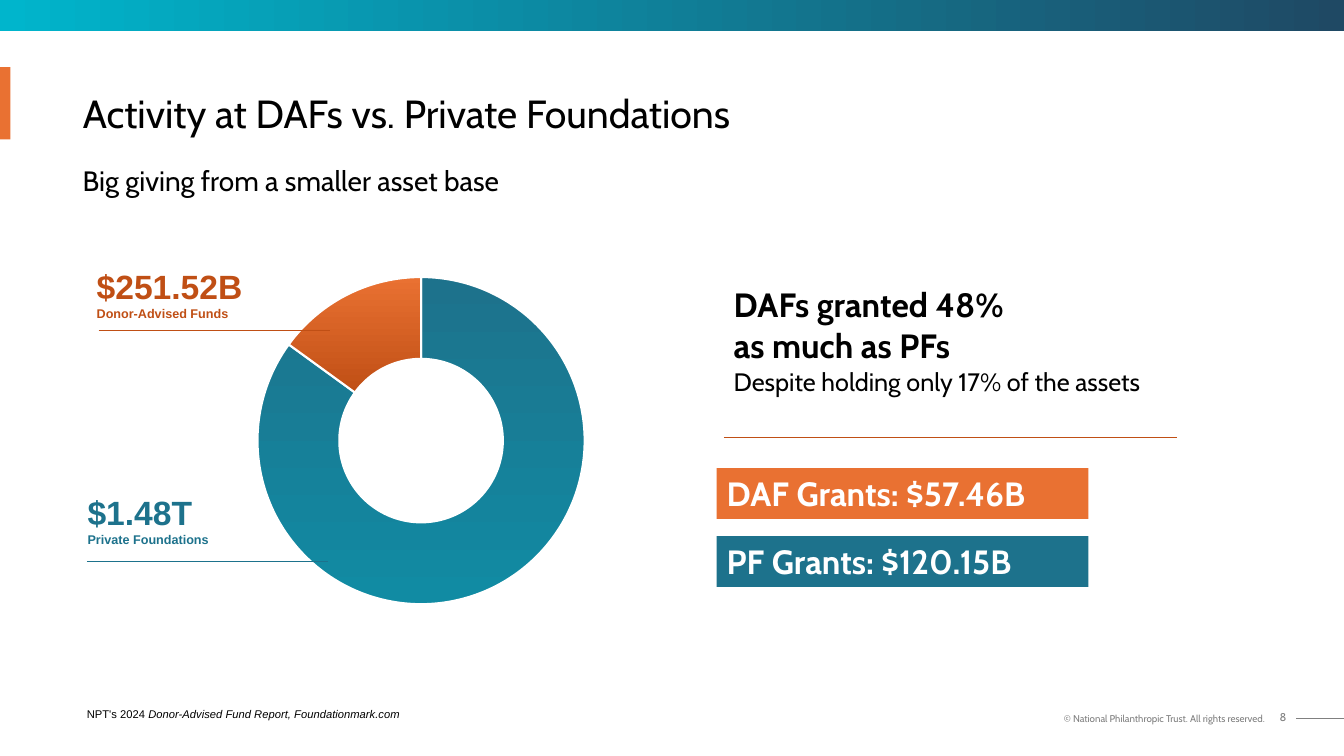
import pptx
import pptx.util
import pptx.chart.data
import pptx.dml.color
import pptx.enum.chart
import pptx.enum.shapes
import pptx.enum.text
import pptx.oxml
import pptx.oxml.ns
from lxml import etree

Pt = pptx.util.Pt
ALIGN = pptx.enum.text.PP_ALIGN
ANCHOR = pptx.enum.text.MSO_ANCHOR

COLORS = {
    "black": "000000", "white": "FFFFFF", "grey": "808080",
    "orange": "E97132", "rust": "C04F15",
    "teal": "1D728C", "light_teal": "118BA3",
    "cyan": "00B5CC", "navy": "1F4964",
}
W, H = 960, 540


def rgb(name):
    return pptx.dml.color.RGBColor.from_string(COLORS[name])


def set_gradient(fill, start, end, angle):
    """Two-colour gradient; angle runs counter-clockwise."""
    fill.gradient()
    fill.gradient_angle = angle
    for stop, name in zip(fill.gradient_stops, (start, end)):
        stop.color.rgb = rgb(name)


def fill_text(tf, paragraphs, font, color, align=ALIGN.LEFT, spacing=None,
              margins=(7.2, 3.6)):
    """Each paragraph is a list of (text, size, bold, italic) runs."""
    tf.word_wrap = True
    tf.auto_size = pptx.enum.text.MSO_AUTO_SIZE.NONE
    tf.margin_left = tf.margin_right = Pt(margins[0])
    tf.margin_top = tf.margin_bottom = Pt(margins[1])
    for i, runs in enumerate(paragraphs):
        p = tf.add_paragraph() if i else tf.paragraphs[0]
        p.alignment = align
        p.space_before = Pt(0)
        if spacing:
            p.line_spacing = spacing
        for text, size, bold, italic in runs:
            r = p.add_run()
            r.text = text
            r.font.name = font
            r.font.size = Pt(size)
            r.font.bold = bold
            r.font.italic = italic
            r.font.color.rgb = rgb(color)


def add_text(slide, box, paragraphs, font, color, **options):
    sp = slide.shapes.add_textbox(*map(Pt, box))
    fill_text(sp.text_frame, paragraphs, font, color, **options)
    return sp


def add_rule(slide, left, right, y, color):
    line = slide.shapes.add_connector(
        pptx.enum.shapes.MSO_CONNECTOR.STRAIGHT, Pt(left), Pt(y), Pt(right), Pt(y))
    line.line.color.rgb = rgb(color)
    line.line.width = Pt(0.75)
    etree.SubElement(line._element.spPr, pptx.oxml.ns.qn("a:effectLst"))


def add_bar(slide, box):
    sp = slide.shapes.add_shape(
        pptx.enum.shapes.MSO_SHAPE.RECTANGLE, *map(Pt, box))
    sp.shadow.inherit = False
    sp.line.fill.background()
    return sp


def add_frame(slide):
    """Top band, accent tab and footer."""
    set_gradient(add_bar(slide, (0, 0, W, 22.5)).fill, "cyan", "navy", 0)
    tab = add_bar(slide, (0, 48, 7.5, 51.5))
    tab.fill.solid()
    tab.fill.fore_color.rgb = rgb("orange")
    add_rule(slide, 926, W, 513, "grey")
    add_text(slide, (877, 504, 49, 29), [[("8", 8, False, False)]],
             "Cabin", "grey", align=ALIGN.RIGHT)
    add_text(slide, (730, 505.5, 180.5, 29),
             [[("© National Philanthropic Trust. All rights reserved.", 7, False, False)]],
             "Cabin", "grey", align=ALIGN.RIGHT)
    add_text(slide, (57, 502.5, 261, 15),
             [[("NPT's 2024 ", 8, False, False),
               ("Donor-Advised Fund Report, Foundationmark.com", 8, False, True)]],
             "Arial", "black", margins=(5, 2.9))


def add_heading(slide, left, top, width):
    title = slide.shapes.title
    title.left, title.top, title.width, title.height = map(Pt, (left, top, width, 47))
    fill_text(title.text_frame,
              [[("Activity at DAFs vs. Private Foundations", 28, False, False)]],
              "Cabin", "black", spacing=0.9)
    title.text_frame.vertical_anchor = ANCHOR.MIDDLE
    add_text(slide, (left, top + 57, width, 30),
             [[("Big giving from a smaller asset base", 20, False, False)]],
             "Cabin", "black", spacing=0.9)


def add_asset_chart(slide, left, top, width, height):
    data = pptx.chart.data.CategoryChartData()
    data.categories = ["1", "2"]
    data.add_series("Series 1", (85, 15))
    chart = slide.shapes.add_chart(
        pptx.enum.chart.XL_CHART_TYPE.DOUGHNUT,
        Pt(left), Pt(top), Pt(width), Pt(height), data).chart
    chart.has_legend = False
    chart.has_title = False
    chart.font.name = "Arial"
    chart.font.size = Pt(10)
    chart.font.color.rgb = rgb("black")

    plot = chart.plots[0]
    plot.vary_by_categories = True
    slices = (("teal", "light_teal"), ("orange", "rust"))
    for i, (start, end) in enumerate(slices):
        fmt = plot.series[0].points[i].format
        set_gradient(fmt.fill, start, end, 270)
        fmt.line.color.rgb = rgb("white")
        fmt.line.width = Pt(1.5)

    qn = pptx.oxml.ns.qn
    plot_area = chart._chartSpace.chart.plotArea
    plot_area.find(".//" + qn("c:holeSize")).set("val", "50")
    for old in plot_area.findall(qn("c:layout")):
        plot_area.remove(old)
    layout = etree.Element(qn("c:layout"))
    manual = etree.SubElement(layout, qn("c:manualLayout"))
    for tag, value in (("layoutTarget", "inner"), ("xMode", "edge"), ("yMode", "edge"),
                       ("x", "0.229"), ("y", "0.102"), ("w", "0.541"), ("h", "0.812")):
        etree.SubElement(manual, qn("c:" + tag)).set("val", value)
    plot_area.insert(0, layout)


def add_callout(slide, left, top, amount, label, color, rule):
    """Amount over its label, with a rule given as (left, right, y) offsets."""
    add_text(slide, (left, top, 128, 54),
             [[(amount, 24, True, False)], [(label, 9, True, False)]], "Arial", color)
    start, end, y = rule
    add_rule(slide, left + start, left + end, top + y, color)


def add_grants(slide, left, top):
    """Message, divider and one bar for each kind of grant."""
    add_text(slide, (left, top, 290, 94),
             [[("DAFs granted 48%", 24, True, False)],
              [("as much as PFs", 24, True, False)]], "Cabin", "black")
    add_text(slide, (left, top + 58.5, 324, 29),
             [[("Despite holding only 17% of the assets", 18, False, False)]],
             "Cabin", "black")
    add_rule(slide, left, left + 324, top + 113, "rust")
    bars = (("DAF Grants: $57.46B", "orange"), ("PF Grants: $120.15B", "teal"))
    for i, (text, color) in enumerate(bars):
        bar = add_bar(slide, (left - 5, top + 134.8 + 48.7 * i, 265.5, 36.3))
        bar.fill.solid()
        bar.fill.fore_color.rgb = rgb(color)
        fill_text(bar.text_frame, [[(text, 24, True, False)]], "Cabin", "white")
        bar.text_frame.vertical_anchor = ANCHOR.TOP


def main():
    prs = pptx.Presentation()
    prs.slide_width, prs.slide_height = Pt(W), Pt(H)
    slide = prs.slides.add_slide(prs.slide_layouts[5])
    add_frame(slide)
    add_heading(slide, 52, 59, 848)
    add_asset_chart(slide, 85, 168.5, 432, 288)
    add_callout(slide, 62, 186.5, "$251.52B", "Donor-Advised Funds", "rust",
                (8.5, 174, 49.5))
    add_callout(slide, 55.5, 347.8, "$1.48T", "Private Foundations", "teal",
                (6.5, 179, 53.2))
    add_grants(slide, 517, 199.5)
    prs.save("out.pptx")


if __name__ == "__main__":
    main()
